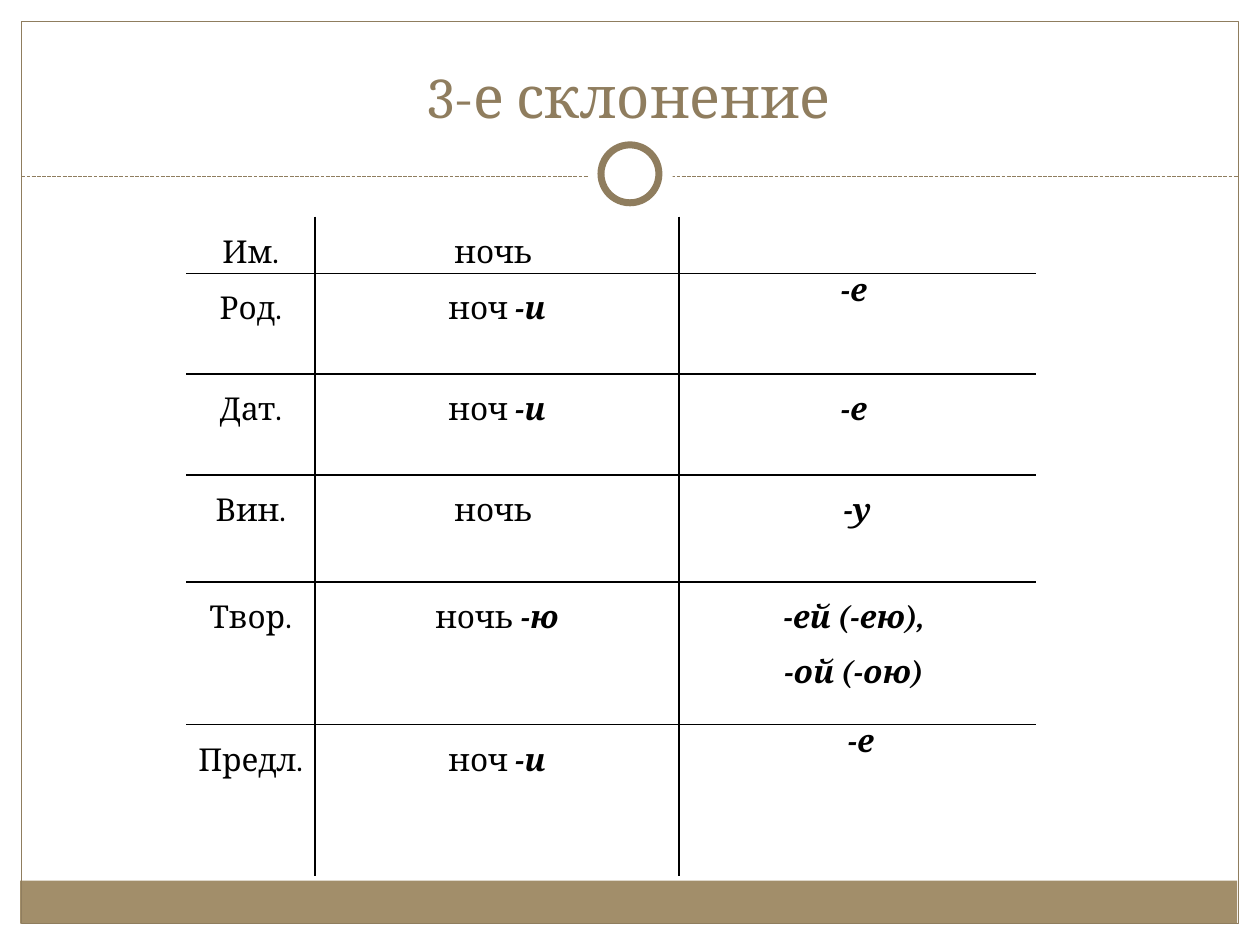
from lxml.etree import SubElement
from pptx import Presentation
from pptx.dml.color import RGBColor
from pptx.enum.dml import MSO_LINE_DASH_STYLE as Dash
from pptx.enum.shapes import MSO_CONNECTOR, MSO_SHAPE
from pptx.enum.text import MSO_ANCHOR, PP_ALIGN
from pptx.oxml.ns import qn
from pptx.util import Inches, Pt

FONT = "Cambria"
BROWN = RGBColor(0x8F, 0x7D, 0x5E)
TAN = RGBColor(0xA2, 0x8E, 0x6A)
WHITE = RGBColor(0xFF, 0xFF, 0xFF)
BLACK = RGBColor(0, 0, 0)

TITLE = "3-е склонение"
# case, stem, ending, endings to compare with, line spacing of the last column
DECLENSION = [
    ("Им.", "ночь ", "", [], 1.5),
    ("Род.", "ноч ", "-и", ["-е "], 1),
    ("Дат.", "ноч ", "-и", ["-е "], 1.5),
    ("Вин.", "ночь ", "", ["-у"], 1.5),
    ("Твор.", "ночь ", "-ю", ["-ей (-ею), ", "-ой (-ою) "], 1.5),
    ("Предл.", "ноч ", "-и", [" -е"], 1),
]
COLUMN_WIDTHS = [1.02, 2.89, 2.83]
ROW_HEIGHTS = [0.45, 0.8, 0.8, 0.85, 1.13, 1.2]
TABLE_LEFT, TABLE_TOP = 1.48, 1.72


def add_shape(slide, kind, box, fill=None, line_width=None):
    shape = slide.shapes.add_shape(kind, *map(Inches, box))
    shape.shadow.inherit = False
    if fill is None:
        shape.fill.background()
    else:
        shape.fill.solid()
        shape.fill.fore_color.rgb = fill
    if line_width is None:
        shape.line.fill.background()
    else:
        shape.line.color.rgb = BROWN
        shape.line.width = Pt(line_width)


def add_frame(slide):
    add_shape(slide, MSO_SHAPE.RECTANGLE, (0.16, 6.99, 9.66, 0.34), fill=TAN)
    add_shape(slide, MSO_SHAPE.RECTANGLE, (0.17, 0.17, 9.66, 7.16), line_width=0.75)
    rule = slide.shapes.add_connector(
        MSO_CONNECTOR.STRAIGHT, Inches(0.17), Inches(1.4), Inches(9.83), Inches(1.4))
    rule.line.color.rgb = BROWN
    rule.line.width = Pt(0.75)
    rule.line.dash_style = Dash.SQUARE_DOT
    SubElement(rule.element.spPr, qn("a:effectLst"))
    add_shape(slide, MSO_SHAPE.OVAL, (4.67, 1.05, 0.67, 0.67), fill=WHITE)
    add_shape(slide, MSO_SHAPE.OVAL, (4.77, 1.15, 0.46, 0.46), fill=WHITE, line_width=4)


def format_title(title):
    title.left, title.top, title.width, title.height = map(Inches, (0.33, 0.25, 9.33, 0.83))
    frame = title.text_frame
    frame.text = TITLE
    frame.vertical_anchor = MSO_ANCHOR.BOTTOM
    paragraph = frame.paragraphs[0]
    paragraph.alignment = PP_ALIGN.CENTER
    font = paragraph.runs[0].font
    font.name, font.size, font.color.rgb = FONT, Pt(33), BROWN


def set_borders(cell, visible):
    """Draw the sides in visible (letters of LRTB) and hide the others."""
    properties = cell._tc.get_or_add_tcPr()
    for side in "LRTB":
        line = SubElement(properties, qn(f"a:ln{side}"), w=str(Pt(1)))
        if side in visible:
            fill = SubElement(line, qn("a:solidFill"))
            SubElement(fill, qn("a:srgbClr"), val=str(BLACK))
        else:
            SubElement(line, qn("a:noFill"))


def fill_cell(cell, lines, spacing):
    """Write lines, each a list of (text, emphasised) runs."""
    cell.margin_left = cell.margin_right = Inches(0.07)
    cell.margin_top = cell.margin_bottom = 0
    frame = cell.text_frame
    for index, runs in enumerate(lines):
        paragraph = frame.add_paragraph() if index else frame.paragraphs[0]
        paragraph.alignment = PP_ALIGN.CENTER
        paragraph.line_spacing = float(spacing)
        for text, emphasised in runs:
            run = paragraph.add_run()
            run.text = text
            font = run.font
            font.name, font.size, font.color.rgb = FONT, Pt(18), BLACK
            font.bold = font.italic = emphasised


def add_declension_table(slide):
    rows, columns = len(ROW_HEIGHTS), len(COLUMN_WIDTHS)
    table = slide.shapes.add_table(
        rows, columns, Inches(TABLE_LEFT), Inches(TABLE_TOP),
        Inches(sum(COLUMN_WIDTHS)), Inches(sum(ROW_HEIGHTS))).table
    table.first_row = table.horz_banding = False
    for column, width in zip(table.columns, COLUMN_WIDTHS):
        column.width = Inches(width)
    for row, height in zip(table.rows, ROW_HEIGHTS):
        row.height = Inches(height)

    for row, (case, stem, ending, others, spacing) in enumerate(DECLENSION):
        word = [(stem, False)] + ([(ending, True)] if ending else [])
        contents = [
            ([[(case, False)]], 1.5),
            ([word], 1.5),
            ([[(other, True)] for other in others], spacing),
        ]
        for column, (lines, line_spacing) in enumerate(contents):
            cell = table.cell(row, column)
            fill_cell(cell, lines, line_spacing)
            inner = {"L": column > 0, "R": column < columns - 1,
                     "T": row > 0, "B": row < rows - 1}
            set_borders(cell, [side for side, shown in inner.items() if shown])
            cell.fill.background()


def main():
    presentation = Presentation()
    presentation.slide_width, presentation.slide_height = Inches(10), Inches(7.5)
    slide = presentation.slides.add_slide(presentation.slide_layouts[5])
    add_frame(slide)
    format_title(slide.shapes.title)
    add_declension_table(slide)
    presentation.save("out.pptx")


if __name__ == "__main__":
    main()
